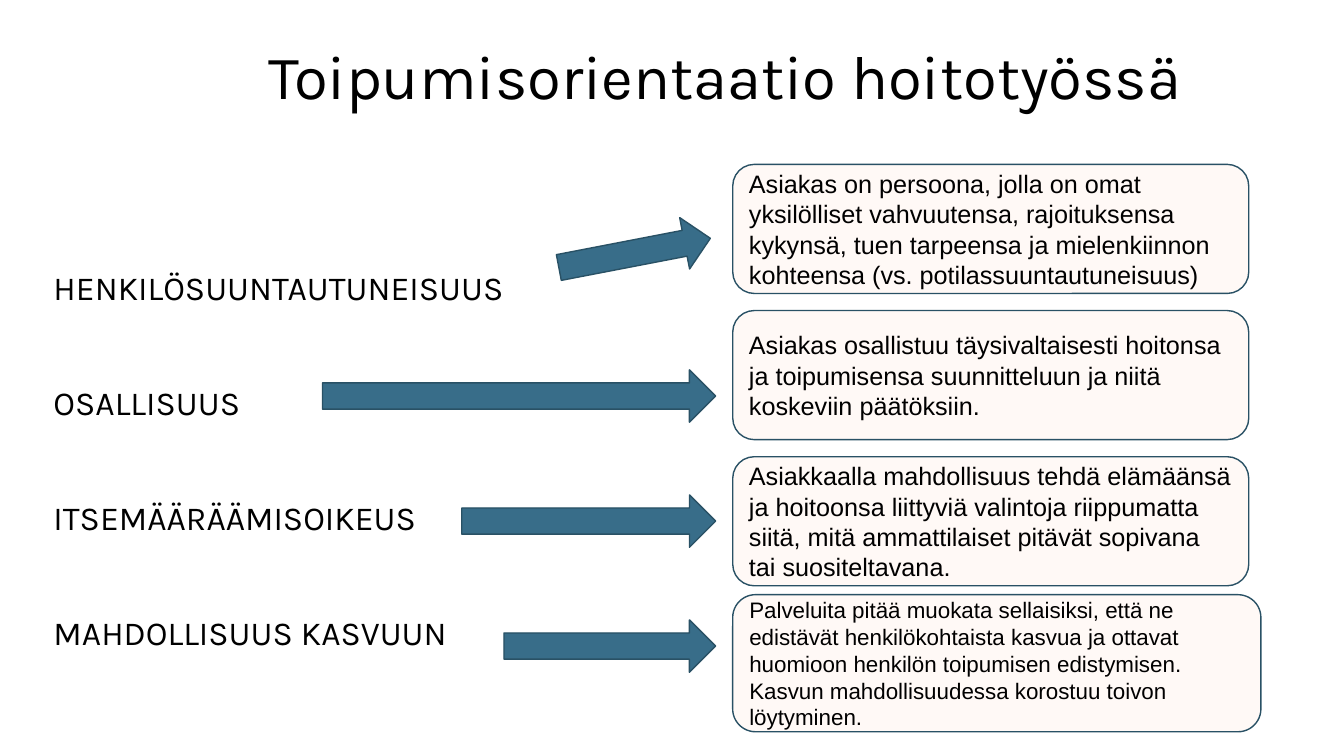
import pptx
import pptx.util
import pptx.dml.color
import pptx.enum.shapes
import pptx.enum.text
import pptx.oxml.ns
import lxml.etree

Pt = pptx.util.Pt
RGBColor = pptx.dml.color.RGBColor
MSO_SHAPE = pptx.enum.shapes.MSO_SHAPE
MSO_ANCHOR = pptx.enum.text.MSO_ANCHOR
PP_ALIGN = pptx.enum.text.PP_ALIGN

BLACK = RGBColor(0x00, 0x00, 0x00)
CREAM = RGBColor(0xFF, 0xF9, 0xF6)
BLUE = RGBColor(0x38, 0x6D, 0x89)
DARK_BLUE = RGBColor(0x29, 0x51, 0x65)

TITLE = "Toipumisorientaatio hoitotyössä"
PRINCIPLES = [
    "HENKILÖSUUNTAUTUNEISUUS",
    "OSALLISUUS",
    "ITSEMÄÄRÄÄMISOIKEUS",
    "MAHDOLLISUUS KASVUUN",
]
EXPLANATIONS = [
    ["Asiakas on persoona, jolla on omat yksilölliset vahvuutensa, rajoituksensa "
     "kykynsä, tuen tarpeensa ja mielenkiinnon kohteensa (vs. potilassuuntautuneisuus)"],
    ["Asiakas osallistuu täysivaltaisesti hoitonsa ja toipumisensa suunnitteluun "
     "ja niitä koskeviin päätöksiin."],
    ["Asiakkaalla mahdollisuus tehdä elämäänsä ja hoitoonsa liittyviä valintoja "
     "riippumatta siitä, mitä ammattilaiset pitävät sopivana tai suositeltavana."],
]
GROWTH = [
    "Palveluita pitää muokata sellaisiksi, että ne edistävät henkilökohtaista kasvua "
    "ja ottavat huomioon henkilön toipumisen edistymisen.",
    "Kasvun mahdollisuudessa korostuu toivon löytyminen.",
]
ARROW_LEFTS = [230.4, 329.8, 360]

BOX_LEFT, BOX_TOP, BOX_STEP = 523.4, 117.4, 104.4
BOX_W, BOX_H = 368.6, 92.2
ARROW_TOP, ARROW_STEP, ARROW_TIP, ARROW_H = 264.2, 89.3, 511.2, 37.4


def write(shape, lines, size, font="Arial", anchor=MSO_ANCHOR.MIDDLE, spacing=1.0, before=0):
    tf = shape.text_frame
    tf.word_wrap = True
    tf.auto_size = pptx.enum.text.MSO_AUTO_SIZE.NONE
    tf.vertical_anchor = anchor
    for i, line in enumerate(lines):
        p = tf.paragraphs[0] if i == 0 else tf.add_paragraph()
        pPr = p._p.get_or_add_pPr()
        pPr.set("marL", "0")
        pPr.set("indent", "0")
        lxml.etree.SubElement(pPr, pptx.oxml.ns.qn("a:buNone"))
        p.alignment = PP_ALIGN.LEFT
        p.line_spacing = spacing
        p.space_before = Pt(before if i else 0)
        r = p.add_run()
        r.text = line
        r.font.name = font
        r.font.size = Pt(size)
        r.font.color.rgb = BLACK


def place(shape, left, top, width, height):
    shape.left, shape.top = Pt(left), Pt(top)
    shape.width, shape.height = Pt(width), Pt(height)


def add_shape(s, kind, fill, left, top, width, height):
    sp = s.shapes.add_shape(kind, Pt(left), Pt(top), Pt(width), Pt(height))
    sp.shadow.inherit = False
    sp.fill.solid()
    sp.fill.fore_color.rgb = fill
    sp.line.color.rgb = DARK_BLUE
    sp.line.width = Pt(1)
    return sp


def main():
    prs = pptx.Presentation()
    prs.slide_width, prs.slide_height = Pt(960), Pt(540)
    s = prs.slides.add_slide(prs.slide_layouts[1])

    place(s.shapes.title, 184.3, 4.3, 712.8, 104.4)
    write(s.shapes.title, [TITLE], 44, font="Karla", spacing=0.9)
    body = s.placeholders[1]
    place(body, 31, 144, 362.2, 342.7)
    write(body, PRINCIPLES, 24, font="Karla", anchor=MSO_ANCHOR.TOP, spacing=2.5, before=10)

    for i, lines in enumerate(EXPLANATIONS):
        sp = add_shape(s, MSO_SHAPE.ROUNDED_RECTANGLE, CREAM,
                       BOX_LEFT, BOX_TOP + i * BOX_STEP, BOX_W, BOX_H)
        write(sp, lines, 18)
    sp = add_shape(s, MSO_SHAPE.ROUNDED_RECTANGLE, CREAM, BOX_LEFT, 424.8, 377.3, 97.9)
    write(sp, GROWTH, 16)

    sp = add_shape(s, MSO_SHAPE.RIGHT_ARROW, BLUE, 398.2, 162, 110.2, ARROW_H)
    sp.rotation = 349.1
    for i, left in enumerate(ARROW_LEFTS):
        add_shape(s, MSO_SHAPE.RIGHT_ARROW, BLUE,
                  left, ARROW_TOP + i * ARROW_STEP, ARROW_TIP - left, ARROW_H)

    prs.save("out.pptx")


if __name__ == "__main__":
    main()
